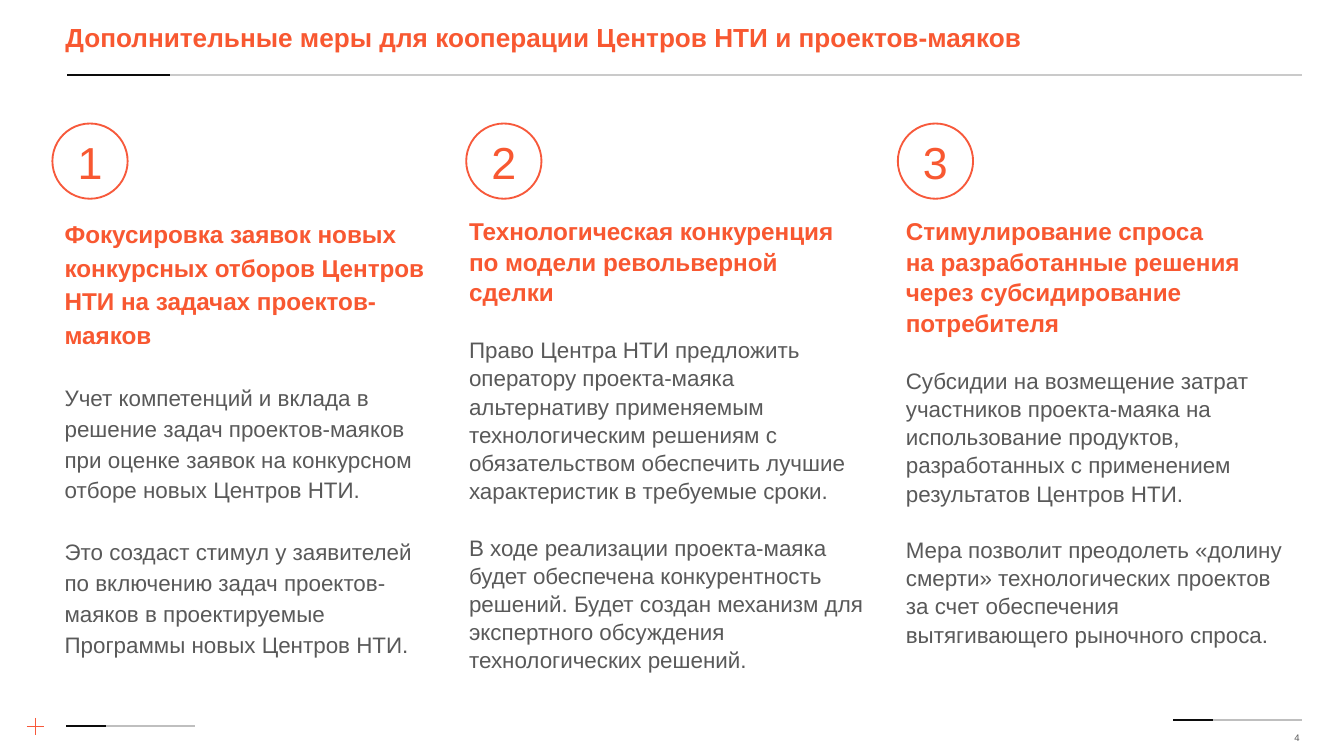
from lxml.etree import SubElement as Sub
from pptx import Presentation
from pptx.dml.color import RGBColor
from pptx.enum.shapes import MSO_CONNECTOR as Conn, MSO_SHAPE as Form
from pptx.enum.text import MSO_ANCHOR as Anchor, MSO_AUTO_SIZE as Auto, PP_ALIGN as Align
from pptx.oxml.ns import qn
from pptx.util import Pt

CORAL = RGBColor(0xF8, 0x58, 0x31)
RIM = RGBColor(0xF7, 0x59, 0x3B)
GRAY = RGBColor(0x59, 0x59, 0x59)
PALE = RGBColor(0xBF, 0xBF, 0xBF)
RULE = RGBColor(0xCA, 0xCA, 0xCA)
INK = RGBColor(0x0C, 0x0C, 0x0C)
WHITE = RGBColor(0xFF, 0xFF, 0xFF)

TITLE = "Дополнительные меры для кооперации Центров НТИ и проектов-маяков"
COLUMNS = [
    (28.1, (27.4, 108, 207.4, 255.6), 1.15, 16.5, [
        "Фокусировка заявок новых конкурсных отборов Центров НТИ на задачах проектов-маяков",
        "Учет компетенций и вклада в решение задач проектов-маяков при оценке заявок на конкурсном отборе новых Центров НТИ.",
        "Это создаст стимул у заявителей по включению задач проектов-маяков в проектируемые Программы новых Центров НТИ."]),
    (249.8, (244.1, 108, 226.8, 263.5), 1.05, 15.1, [
        "Технологическая конкуренция по модели револьверной сделки",
        "Право Центра НТИ предложить оператору проекта-маяка альтернативу применяемым технологическим решениям с обязательством обеспечить лучшие характеристик в требуемые сроки.",
        "В ходе реализации проекта-маяка будет обеспечена конкурентность решений. Будет создан механизм для экспертного обсуждения технологических решений."]),
    (481, (478.1, 108, 217.4, 265.7), 1.05, 15.1, [
        "Стимулирование спроса \vна разработанные решения через субсидирование потребителя",
        "Субсидии на возмещение затрат участников проекта-маяка на использование продуктов, разработанных с применением результатов Центров НТИ.",
        "Мера позволит преодолеть «долину смерти» технологических проектов за счет обеспечения вытягивающего рыночного спроса."]),
]


class Deck:
    font = "Arial"
    inset = 7.2

    def __init__(self):
        self.prs = Presentation()
        self.prs.slide_width, self.prs.slide_height = Pt(720), Pt(405)
        self.slide = self.prs.slides.add_slide(self.prs.slide_layouts[4])
        self.title, *self.bodies = self.slide.placeholders
        spare = self.bodies.pop().element
        spare.getparent().remove(spare)

    def place(self, shape, box):
        shape.left, shape.top, shape.width, shape.height = map(Pt, box)

    def frame(self, shape, inset, anchor=Anchor.TOP):
        text = shape.text_frame
        text.word_wrap = True
        text.auto_size = Auto.NONE
        text.vertical_anchor = anchor
        text.margin_left = text.margin_right = Pt(inset)
        text.margin_top = text.margin_bottom = Pt(inset)
        return text

    def style(self, par, size, color, bold=False, align=Align.LEFT, pitch=1.0):
        par.alignment = align
        par.line_spacing = pitch
        for run in par.runs:
            run.font.name = self.font
            run.font.size = Pt(size)
            run.font.bold = bold
            run.font.color.rgb = color

    def head(self, words, box):
        self.place(self.title, box)
        text = self.frame(self.title, self.inset)
        text.text = words
        self.style(text.paragraphs[0], 14, CORAL, True)

    def column(self, body, box, pitch, gap, parts):
        self.place(body, box)
        text = self.frame(body, self.inset)
        for num, words in enumerate(parts):
            par = text.add_paragraph() if num else text.paragraphs[0]
            par.text = words
            props = par._p.get_or_add_pPr()
            props.set("marL", "0")
            props.set("indent", "0")
            Sub(props, qn("a:buNone"))
            par.space_before = Pt(gap if num else 0)
            if num:
                self.style(par, 12, GRAY, pitch=pitch)
            else:
                self.style(par, 13, CORAL, True, pitch=pitch)

    def badge(self, left, num):
        disc = self.slide.shapes.add_shape(Form.OVAL, Pt(left), Pt(66.2), Pt(40.3), Pt(40.3))
        disc.shadow.inherit = False
        disc.fill.solid()
        disc.fill.fore_color.rgb = WHITE
        disc.line.color.rgb = RIM
        disc.line.width = Pt(1)
        text = self.frame(disc, 0, Anchor.MIDDLE)
        text.text = str(num)
        self.style(text.paragraphs[0], 24, CORAL, align=Align.CENTER)

    def label(self, words, box):
        shape = self.slide.shapes.add_textbox(*map(Pt, box))
        text = self.frame(shape, self.inset, Anchor.MIDDLE)
        text.text = words
        self.style(text.paragraphs[0], 5.1, GRAY, align=Align.RIGHT, pitch=0.8)

    def line(self, start, end, color, width=0.75):
        wire = self.slide.shapes.add_connector(Conn.STRAIGHT, *map(Pt, start + end))
        wire.line.color.rgb = color
        wire.line.width = Pt(width)
        Sub(wire._element.spPr, qn("a:effectLst"))

    def rule(self, left, top, long, short, color, width=0.75):
        self.line((left, top), (left + long, top), color, width)
        self.line((left, top), (left + short, top), INK, width)


def main():
    deck = Deck()
    deck.rule(35.5, 388.9, 69, 21.4, PALE)
    deck.rule(628.5, 385.8, 69, 21.4, PALE)
    deck.line((14.4, 389.3), (23.4, 389.3), RIM)
    deck.line((18.9, 384.6), (18.9, 393.8), RIM)
    deck.rule(36, 40.1, 661.5, 55, RULE, 1)
    deck.head(TITLE, (27.8, 4.3, 585.4, 31.7))
    for num, (body, data) in enumerate(zip(deck.bodies, COLUMNS), 1):
        left, box, pitch, gap, parts = data
        deck.column(body, box, pitch, gap, parts)
        deck.badge(left, num)
    deck.label("4", (666.7, 385.9, 36.7, 19.4))
    deck.prs.save("out.pptx")


if __name__ == "__main__":
    main()
